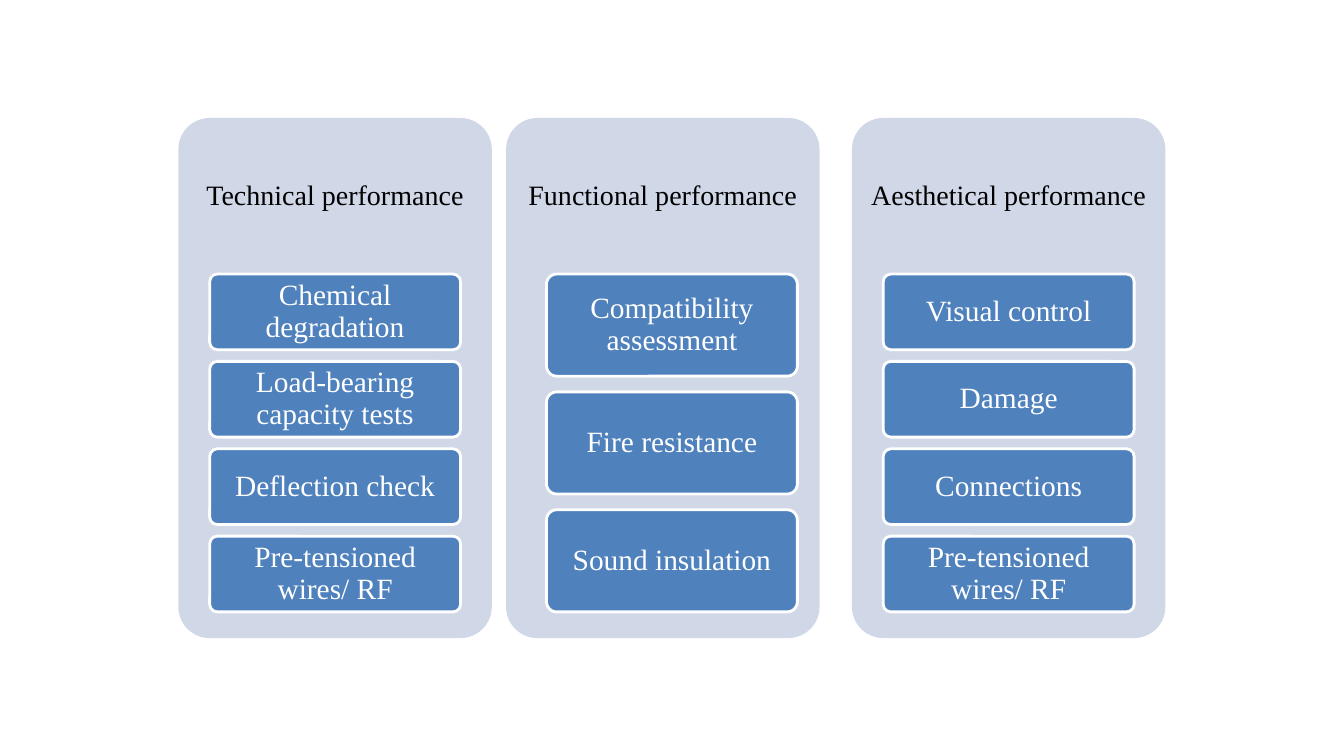
import dataclasses

import pptx
import pptx.dml.color
import pptx.enum.shapes
import pptx.enum.text
import pptx.util

Pt = pptx.util.Pt


@dataclasses.dataclass(frozen=True)
class Theme:
    font: str = "Times New Roman"
    heading_size: int = 20
    item_size: int = 21
    panel_fill: str = "D0D8E8"
    item_fill: str = "4F81BD"
    heading_color: str = "000000"
    light: str = "FFFFFF"


PANEL_TOP, PANEL_WIDTH, PANEL_HEIGHT = 84.3, 223.9, 371.5
HEADING_INSET, HEADING_HEIGHT = 3.3, 105
ITEM_TOP, ITEM_WIDTH, STACK_HEIGHT = 195.75, 179.2, 241.35
GAP_RATIO = 2 / 13  # gap between items, as a share of item height

# heading, panel left, item left, items
COLUMNS = [
    ("Technical performance", 127.4, 149.8,
     ["Chemical degradation", "Load-bearing capacity tests",
      "Deflection check", "Pre-tensioned wires/ RF"]),
    ("Functional performance", 361.5, 390.4,
     ["Compatibility assessment", "Fire resistance", "Sound insulation"]),
    ("Aesthetical performance", 608.5, 630.9,
     ["Visual control", "Damage", "Connections", "Pre-tensioned wires/ RF"]),
]


class SlideBuilder:
    def __init__(self, slide, theme):
        self.slide = slide
        self.theme = theme

    def color(self, value):
        return pptx.dml.color.RGBColor.from_string(value)

    def rounded_box(self, left, top, width, height, fill, line=None):
        shape = self.slide.shapes.add_shape(
            pptx.enum.shapes.MSO_SHAPE.ROUNDED_RECTANGLE,
            Pt(left), Pt(top), Pt(width), Pt(height))
        shape.adjustments[0] = 0.1
        shape.shadow.inherit = False
        shape.fill.solid()
        shape.fill.fore_color.rgb = self.color(fill)
        if line:
            shape.line.color.rgb = self.color(line)
            shape.line.width = Pt(2)
        else:
            shape.line.fill.background()
        return shape

    def centered_text(self, shape, text, size, color, side_margin, end_margin):
        """Put one centred paragraph in the middle of the shape."""
        frame = shape.text_frame
        frame.word_wrap = True
        frame.vertical_anchor = pptx.enum.text.MSO_ANCHOR.MIDDLE
        frame.margin_left = frame.margin_right = Pt(side_margin)
        frame.margin_top = frame.margin_bottom = Pt(end_margin)
        paragraph = frame.paragraphs[0]
        paragraph.alignment = pptx.enum.text.PP_ALIGN.CENTER
        paragraph.line_spacing = 0.9
        run = paragraph.add_run()
        run.text = text
        run.font.name = self.theme.font
        run.font.size = Pt(size)
        run.font.color.rgb = self.color(color)

    def panel(self, left, heading):
        self.rounded_box(left, PANEL_TOP, PANEL_WIDTH, PANEL_HEIGHT,
                         self.theme.panel_fill)
        box = self.slide.shapes.add_textbox(
            Pt(left + HEADING_INSET), Pt(PANEL_TOP + HEADING_INSET),
            Pt(PANEL_WIDTH - 2 * HEADING_INSET), Pt(HEADING_HEIGHT))
        self.centered_text(box, heading, self.theme.heading_size,
                           self.theme.heading_color, 6, 6)

    def item_stack(self, left, items):
        """Share the fixed stack height equally among the items."""
        count = len(items)
        height = STACK_HEIGHT / (count + (count - 1) * GAP_RATIO)
        for index, item in enumerate(items):
            top = ITEM_TOP + index * height * (1 + GAP_RATIO)
            box = self.rounded_box(left, top, ITEM_WIDTH, height,
                                   self.theme.item_fill, self.theme.light)
            self.centered_text(box, item, self.theme.item_size,
                               self.theme.light, 4.2, 3.1)


def main():
    presentation = pptx.Presentation()
    presentation.slide_width = Pt(960)
    presentation.slide_height = Pt(540)
    slide = presentation.slides.add_slide(presentation.slide_layouts[6])
    builder = SlideBuilder(slide, Theme())
    for heading, panel_left, item_left, items in COLUMNS:
        builder.panel(panel_left, heading)
        builder.item_stack(item_left, items)
    presentation.save("out.pptx")


if __name__ == "__main__":
    main()
